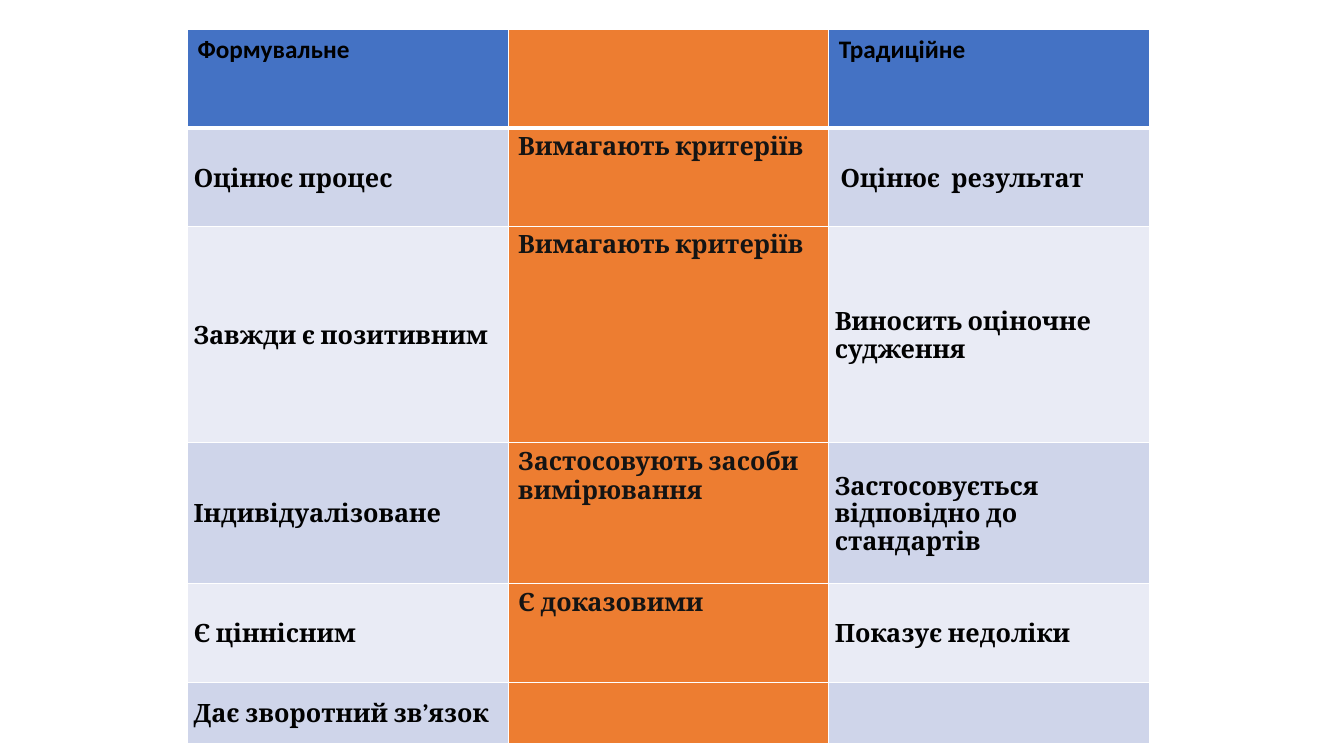
from dataclasses import dataclass

from lxml.etree import SubElement
from pptx import Presentation
from pptx.dml.color import RGBColor as RGB
from pptx.enum.text import MSO_ANCHOR as Anchor
from pptx.oxml.ns import qn
from pptx.util import Emu, Pt

PX = 9144  # EMU per px, 100 px to the inch


@dataclass(frozen=True)
class Theme:
    header: str = "4472C4"
    shared: str = "ED7D31"
    bands: tuple = ("CFD5EA", "E9EBF5")
    border: str = "FFFFFF"
    header_ink: str = "000000"
    body_ink: str = "010101"
    shared_ink: str = "141414"
    header_font: str = "Calibri"
    body_font: str = "Cambria"
    size: int = 18
    line: int = 1
    header_line: int = 3
    spacing: float = 0.94


THEME = Theme()
SHARED_COL = 1
TIGHT_SHARED_ROW = 2  # the tall row uses tighter lines in every column
COL_WIDTH = 318
ROW_HEIGHTS = (98, 98, 214, 140, 98, 61)
ROWS = (
    ("Формувальне", "", "Традиційне"),
    ("Оцінює процес", "Вимагають критеріїв", " Оцінює  результат"),
    ("Завжди є позитивним", "Вимагають критеріїв", "Виносить оціночне судження"),
    ("Індивідуалізоване", "Застосовують засоби вимірювання",
     "Застосовується відповідно до стандартів"),
    ("Є ціннісним", "Є доказовими", "Показує недоліки"),
    ("Дає зворотний зв’язок", "", ""),
)


def px(n):
    return Emu(n * PX)


def set_borders(cell, bottom):
    """Draw the four cell edges, which must precede the fill in tcPr."""
    tc_pr = cell._tc.get_or_add_tcPr()
    widths = {"lnL": THEME.line, "lnR": THEME.line, "lnT": THEME.line, "lnB": bottom}
    for edge, width in widths.items():
        ln = SubElement(tc_pr, qn(f"a:{edge}"), w=str(Pt(width)))
        fill = SubElement(ln, qn("a:solidFill"))
        SubElement(fill, qn("a:srgbClr"), val=THEME.border)


def set_fill(cell, color):
    cell.fill.solid()
    cell.fill.fore_color.rgb = RGB.from_string(color)


def set_text(cell, text, font, ink, spacing=None):
    p = cell.text_frame.paragraphs[0]
    if spacing:
        p.line_spacing = spacing
    r = p.add_run()
    r.text = text
    r.font.name = font
    r.font.size = Pt(THEME.size)
    r.font.bold = True
    r.font.color.rgb = RGB.from_string(ink)


def center_vertically(cell):
    cell.vertical_anchor = Anchor.MIDDLE
    cell.margin_left = cell.margin_right = cell.margin_bottom = px(6)
    cell.margin_top = px(9)


def style_cell(cell, row, col, text):
    is_header, is_shared = row == 0, col == SHARED_COL
    set_borders(cell, THEME.header_line if is_header else THEME.line)

    if is_shared:
        fill, ink = THEME.shared, THEME.shared_ink
    elif is_header:
        fill, ink = THEME.header, THEME.header_ink
    else:
        fill, ink = THEME.bands[(row - 1) % 2], THEME.body_ink
    set_fill(cell, fill)

    if not text:
        return
    side_cell = not is_header and not is_shared
    if side_cell:
        center_vertically(cell)
    tight = side_cell or row == TIGHT_SHARED_ROW
    font = THEME.header_font if is_header else THEME.body_font
    set_text(cell, text, font, ink, THEME.spacing if tight else None)


def add_comparison(s, left, top):
    cols = len(ROWS[0])
    frame = s.shapes.add_table(len(ROWS), cols, px(left), px(top),
                               px(COL_WIDTH * cols), px(sum(ROW_HEIGHTS)))
    table = frame.table
    table.first_row = table.horz_banding = False
    for column in table.columns:
        column.width = px(COL_WIDTH)
    for i, (height, texts) in enumerate(zip(ROW_HEIGHTS, ROWS)):
        table.rows[i].height = px(height)
        for j, text in enumerate(texts):
            style_cell(table.cell(i, j), i, j, text)


def main():
    prs = Presentation()
    prs.slide_width, prs.slide_height = px(1333), px(750)
    s = prs.slides.add_slide(prs.slide_layouts[6])

    # Formative and traditional assessment, with shared traits between them
    add_comparison(s, 186, 29)

    prs.save("out.pptx")


if __name__ == "__main__":
    main()
